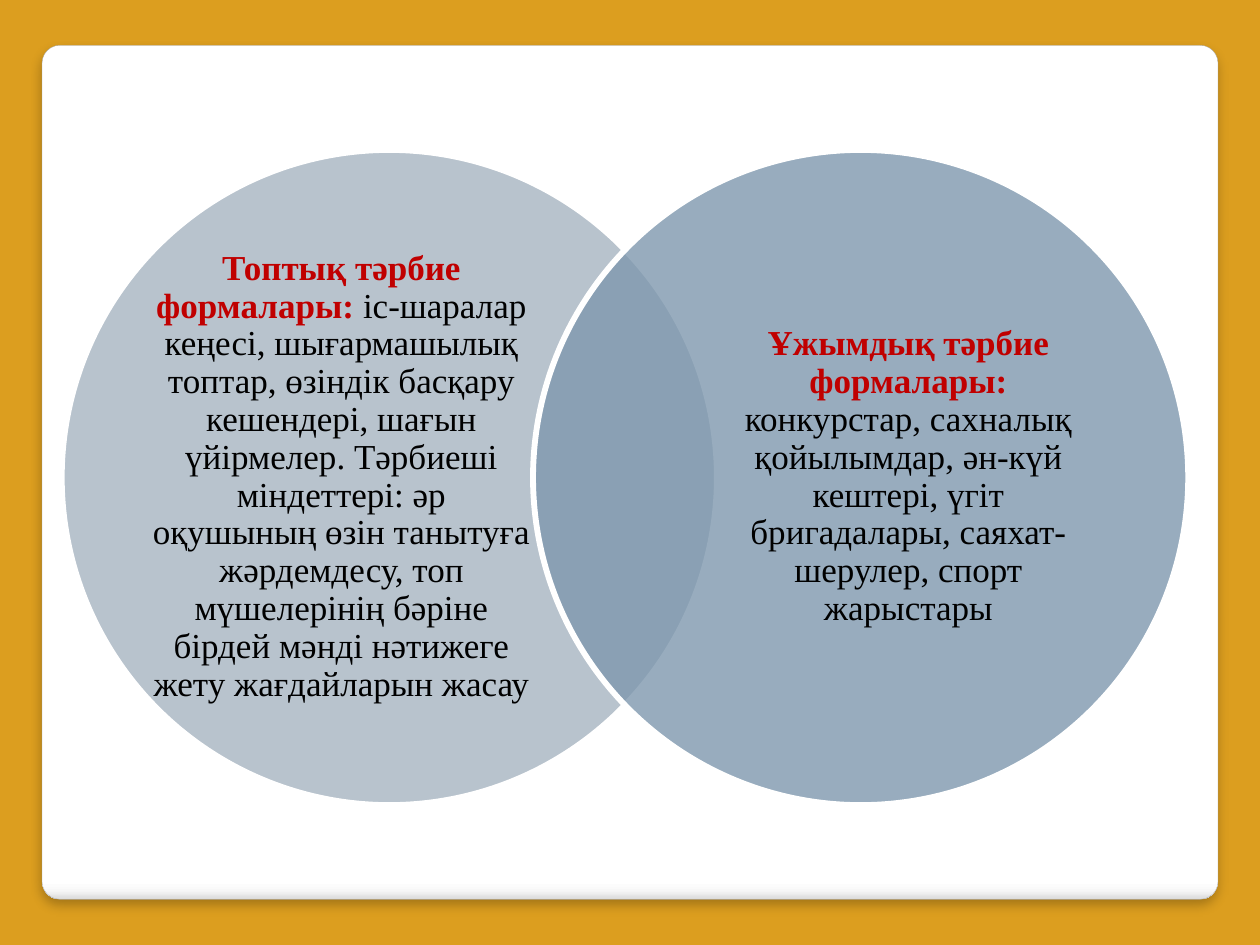
from pptx import Presentation
from pptx.dml.color import RGBColor
from pptx.enum.shapes import MSO_SHAPE as Preset
from pptx.enum.text import MSO_ANCHOR as Anchor, PP_ALIGN as Align
from pptx.oxml import parse_xml
from pptx.oxml.ns import nsdecls, qn
from pptx.util import Pt

GOLD = RGBColor(0xDC, 0x9E, 0x1F)
WHITE = RGBColor(0xFF, 0xFF, 0xFF)
PANEL_EDGE = RGBColor(0xA4, 0xA4, 0xA4)
PALE_BLUE = RGBColor(0x72, 0x89, 0x9D)
STEEL_BLUE = RGBColor(0x7F, 0x98, 0xAE)
RED = RGBColor(0xC0, 0x00, 0x00)
BLACK = RGBColor(0x00, 0x00, 0x00)

FONT = "Times New Roman"
PANEL_STOPS = [(0, "FFFFFF"), (98, "FFFFFF"), (99, "F7F7F7"), (100, "DADADA")]
CIRCLE_TOP, CIRCLE_SIZE = 85.7, 374.4
TEXT_TOP, TEXT_WIDTH, TEXT_HEIGHT = 129.6, 216, 285.8

# circle left, colour, opacity in percent, text left, heading, body
SETS = [
    (35.3, PALE_BLUE, 50, 87.1, "Топтық тəрбие формалары: ",
     "іс-шаралар кеңесі, шығармашылық топтар, өзіндік басқару кешендері, "
     "шағын үйірмелер. Тəрбиеші міндеттері: əр оқушының өзін танытуға "
     "жəрдемдесу, топ мүшелерінің бəріне бірдей мəнді нəтижеге жету "
     "жағдайларын жасау"),
    (304.6, STEEL_BLUE, 80, 411.1, "Ұжымдық тəрбие формалары: ",
     "конкурстар, сахналық қойылымдар, əн-күй кештері, үгіт бригадалары, "
     "саяхат-шерулер, спорт жарыстары"),
]


def add_outlined(page, preset, left, top, width, height, edge, weight):
    shape = page.shapes.add_shape(preset, Pt(left), Pt(top), Pt(width), Pt(height))
    shape.shadow.inherit = False
    shape.line.color.rgb = edge
    shape.line.width = Pt(weight)
    return shape


def add_panel(page):
    """White rounded card with a shaded lower edge and a soft shadow."""
    panel = add_outlined(page, Preset.ROUNDED_RECTANGLE, 24, 25.9, 672, 488,
                         PANEL_EDGE, 0.16)
    panel.adjustments[0] = 0.021
    panel.fill.background()
    properties = panel.element.spPr
    stops = "".join(f'<a:gs pos="{place * 1000}"><a:srgbClr val="{colour}"/></a:gs>'
                    for place, colour in PANEL_STOPS)
    gradient = parse_xml(f'<a:gradFill {nsdecls("a")}><a:gsLst>{stops}</a:gsLst>'
                         '<a:lin ang="5400000" scaled="0"/></a:gradFill>')
    properties.replace(properties.find(qn("a:noFill")), gradient)
    properties.find(qn("a:effectLst")).append(parse_xml(
        f'<a:outerShdw {nsdecls("a")} blurRad="{Pt(6)}" dist="{Pt(4)}" '
        'dir="5400000" algn="tl" rotWithShape="0"><a:srgbClr val="000000">'
        '<a:alpha val="25000"/></a:srgbClr></a:outerShdw>'))


def add_circle(page, left, colour, opacity):
    circle = add_outlined(page, Preset.OVAL, left, CIRCLE_TOP, CIRCLE_SIZE,
                          CIRCLE_SIZE, WHITE, 3.35)
    circle.fill.solid()
    circle.fill.fore_color.rgb = colour
    fill = circle.element.spPr.find(qn("a:solidFill"))
    fill[0].append(parse_xml(f'<a:alpha {nsdecls("a")} val="{opacity * 1000}"/>'))


def add_span(para, text, colour, bold):
    span = para.add_run()
    span.text = text
    span.font.name = FONT
    span.font.size = Pt(20)
    span.font.bold = bold
    span.font.color.rgb = colour


def add_description(page, left, heading, body):
    box = page.shapes.add_textbox(Pt(left), Pt(TEXT_TOP), Pt(TEXT_WIDTH), Pt(TEXT_HEIGHT))
    frame = box.text_frame
    frame.word_wrap = True
    frame.vertical_anchor = Anchor.MIDDLE
    frame.margin_left = frame.margin_right = 0
    frame.margin_top = frame.margin_bottom = 0
    para = frame.paragraphs[0]
    para.alignment = Align.CENTER
    para.line_spacing = 0.9
    para.space_after = Pt(7)
    add_span(para, heading, RED, True)
    add_span(para, body, BLACK, False)


def main():
    deck = Presentation()
    deck.slide_width, deck.slide_height = Pt(720), Pt(540)
    page = deck.slides.add_slide(deck.slide_layouts[6])
    page.background.fill.solid()
    page.background.fill.fore_color.rgb = GOLD
    add_panel(page)
    for circle_left, colour, opacity, text_left, heading, body in SETS:
        add_circle(page, circle_left, colour, opacity)
        add_description(page, text_left, heading, body)
    deck.save("out.pptx")


if __name__ == "__main__":
    main()
